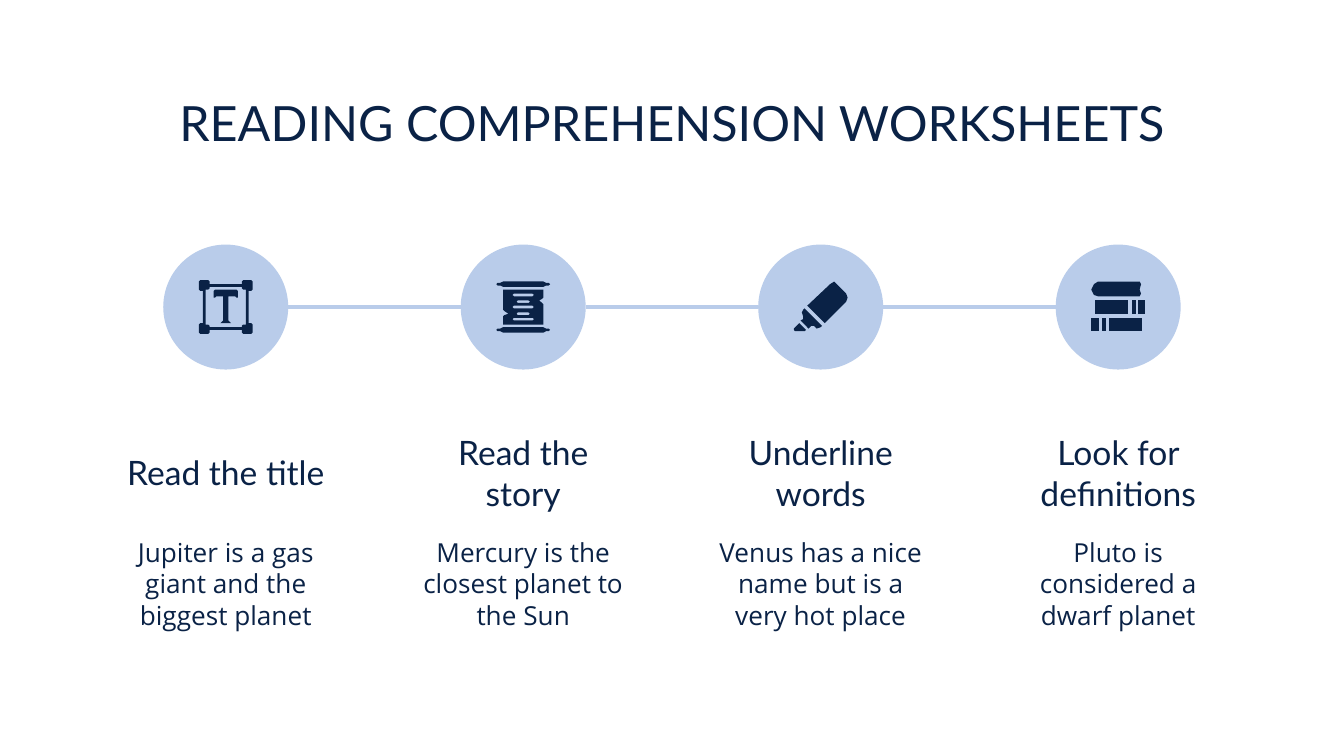
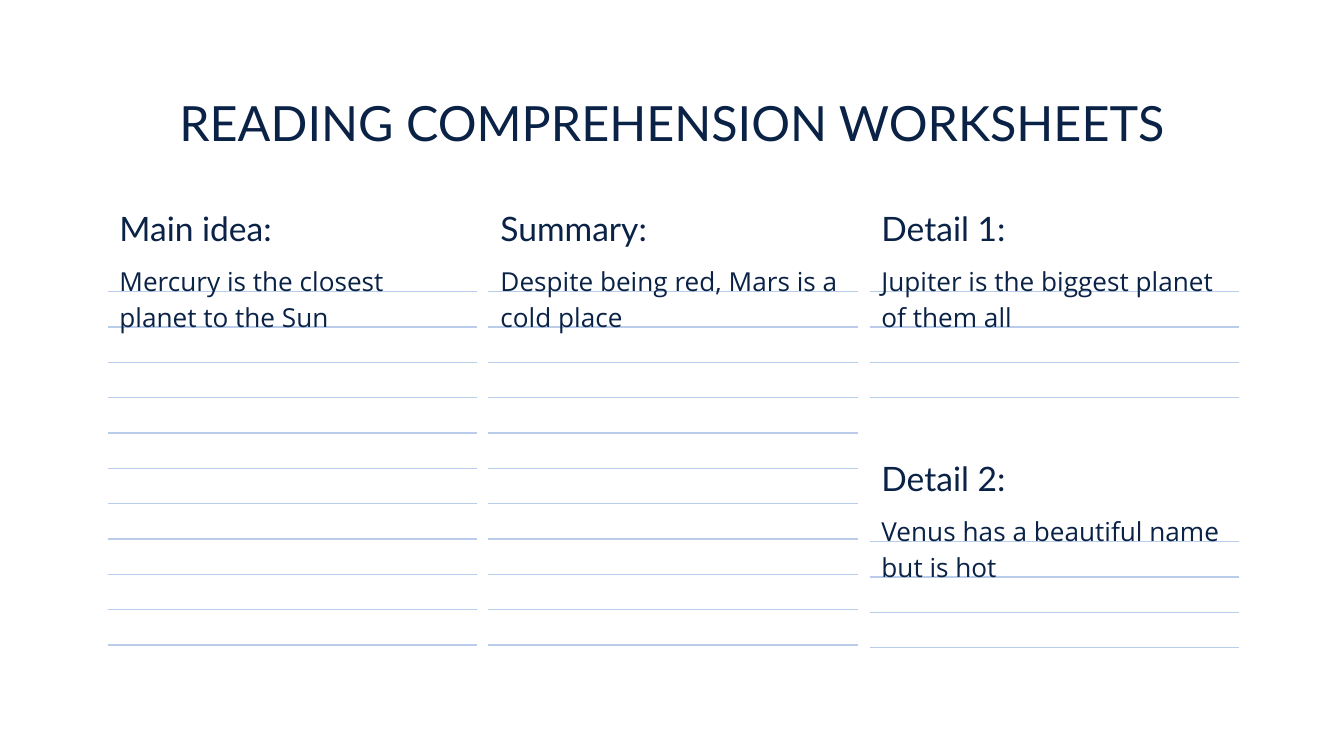
from pptx import Presentation
from pptx.dml.color import RGBColor
from pptx.enum.shapes import MSO_CONNECTOR as Connector, MSO_SHAPE as Preset
from pptx.enum.text import MSO_ANCHOR as Anchor, MSO_AUTO_SIZE as AutoSize, PP_ALIGN as Align
from pptx.oxml.ns import qn
from pptx.util import Inches, Pt
from lxml import etree

NAVY = RGBColor(0x0A, 0x22, 0x46)
SKY = RGBColor(0xB9, 0xCC, 0xEA)
WHITE = RGBColor(0xFF, 0xFF, 0xFF)
HEADING_FONT, BODY_FONT = "Lato", "Open Sans"
TITLE = "READING COMPREHENSION WORKSHEETS"
TITLE_ONLY = 5

# Grids, in inches
PAGE_WIDTH = 10
PAGE_HEIGHT = PAGE_WIDTH * 9 / 16
MARGIN = 0.79
STEP_PITCH, STEP_WIDTH, CIRCLE = 6.64 / 3, 1.78, 0.93
NOTE_PITCH, NOTE_WIDTH, RULE_PITCH = 5.67 / 2, 2.75, 2.63 / 10
NOTE_TOP, LOWER_NOTE_TOP = 1.51, 3.37


# Outlines for icons, in hundredths of an inch from the circle's centre
def mirrored_x(half):
    return half + [(-x, y) for x, y in reversed(half)]


def mirrored_both(quarter):
    left = quarter + [(x, -y) for x, y in reversed(quarter)]
    return left + [(-x, y) for x, y in reversed(left)]


def shifted(points, down):
    return [(x, y + down) for x, y in points]


def slab(left, top, right, bottom):
    return [(left, top), (right, top), (right, bottom), (left, bottom)]


def text_bar(half, middle):
    return shifted(mirrored_both([(1 - half, -1), (-half, 0)]), middle)


# An icon is a list of parts; a part is an outline followed by its holes
FRAME = mirrored_both([(-12, -17), (-12, -19), (-13, -20), (-19, -20),
                       (-20, -19), (-20, -13), (-19, -12), (-17, -12)])
FRAME_HOLE = mirrored_both([(-12, -15), (-12, -14), (-13, -13), (-15, -13)])
LETTER = mirrored_x([(-8, -13), (-9, -12), (-9, -7), (-8, -7), (-7, -8),
                     (-2, -8), (-2, 10), (-4, 12)])
TITLE_ICON = [[FRAME, FRAME_HOLE], [LETTER]]

ROLL = mirrored_both([(-15, -2), (-17, -1), (-19, -1), (-20, 0)])
PAPER = [(-15, -13), (-15, 2), (-14, 3), (-11, 5), (-14, 6), (-15, 7), (-15, 13),
         (15, 13), (15, -2), (14, -3), (12, -5), (14, -6), (15, -7), (15, -13)]
WRITING = [text_bar(half, middle)
           for half, middle in ((8, -9), (5, -4), (8, 0), (5, 5), (8, 9))]
SCROLL_ICON = [[shifted(ROLL, 17)], [shifted(ROLL, -17)], [PAPER] + WRITING]

MARKER_ICON = [
    [[(10, -19), (7, -17), (-10, -1), (3, 12), (19, -4), (20, -7), (19, -10), (12, -17)]],
    [[(-12, 1), (-13, 2), (-14, 4), (-13, 7), (-13, 9), (-15, 10), (-9, 16),
      (-7, 14), (-5, 14), (-3, 16), (0, 15), (1, 14)]],
    [[(-16, 12), (-20, 16), (-20, 17), (-19, 18), (-12, 18), (-11, 17)]],
]

TOP_BOOK = [(-15, -19), (-18, -17), (-20, -13), (-18, -9), (-15, -8),
            (16, -8), (17, -10), (16, -13), (17, -17), (16, -19)]
BOOKS_ICON = [[TOP_BOOK]] + [
    [slab(left, top, right, top + 10)]
    for left, right, top in ((-17, 7, -5), (10, 13, -5), (15, 20, -5),
                             (-20, -14, 8), (-12, -9, 8), (-7, 18, 8))]

STEPS = [
    ("Read the title", "Jupiter is a gas giant and the biggest planet", TITLE_ICON),
    ("Read the story", "Mercury is the closest planet to the Sun", SCROLL_ICON),
    ("Underline words", "Venus has a nice name but is a very hot place", MARKER_ICON),
    ("Look for definitions", "Pluto is considered a dwarf planet", BOOKS_ICON),
]

# Column, top, number of ruled lines, heading, text
NOTES = [
    (0, NOTE_TOP, 11, "Main idea:", "Mercury is the closest planet to the Sun"),
    (1, NOTE_TOP, 11, "Summary:", "Despite being red, Mars is a cold place"),
    (2, NOTE_TOP, 4, "Detail 1:", "Jupiter is the biggest planet of them all"),
    (2, LOWER_NOTE_TOP, 4, "Detail 2:", "Venus has a beautiful name but is hot"),
]


def write(box, text, size, font, align, anchor=Anchor.TOP, spacing=1.0):
    frame = box.text_frame
    frame.word_wrap = True
    frame.auto_size = AutoSize.NONE
    frame.vertical_anchor = anchor
    frame.margin_left = frame.margin_right = Inches(0.1)
    frame.margin_top = frame.margin_bottom = Inches(0.1)
    para = frame.paragraphs[0]
    para.alignment = align
    para.line_spacing = spacing
    para.space_before = Pt(0)
    span = para.add_run()
    span.text = text
    span.font.size = Pt(size)
    span.font.name = font
    span.font.color.rgb = NAVY


def add_text(page, left, top, width, height, *style, **options):
    box = page.shapes.add_textbox(*map(Inches, (left, top, width, height)))
    write(box, *style, **options)


def paint(shape, colour):
    shape.shadow.inherit = False
    shape.fill.solid()
    shape.fill.fore_color.rgb = colour
    shape.line.fill.background()


def add_rule(page, left, right, y, weight):
    rule = page.shapes.add_connector(
        Connector.STRAIGHT, *map(Inches, (left, y, right, y)))
    rule.line.color.rgb = SKY
    rule.line.width = Pt(weight)
    etree.SubElement(rule._element.spPr, qn("a:effectLst"))


def add_titled_page(deck):
    page = deck.slides.add_slide(deck.slide_layouts[TITLE_ONLY])
    page.background.fill.solid()
    page.background.fill.fore_color.rgb = WHITE
    title = page.shapes.title
    title.left, title.top, title.width, title.height = map(
        Inches, (0.78, 0.59, 8.45, 0.63))
    write(title, TITLE, 26, HEADING_FONT, Align.CENTER)
    return page


def add_icon(page, icon, centre_x, centre_y):
    for outline, *holes in icon:
        builder = page.shapes.build_freeform(*outline[0], scale=Inches(0.01))
        builder.add_line_segments(outline[1:])
        for hole in holes:
            builder.move_to(*hole[0])
            builder.add_line_segments(hole[1:])
        paint(builder.convert_to_shape(Inches(centre_x), Inches(centre_y)), NAVY)


def add_step(page, left, top, heading, text, icon):
    # Circle with its icon
    circle_left = left + (STEP_WIDTH - CIRCLE) / 2
    circle = page.shapes.add_shape(
        Preset.OVAL, *map(Inches, (circle_left, top, CIRCLE, CIRCLE)))
    paint(circle, SKY)
    add_icon(page, icon, left + STEP_WIDTH / 2, top + CIRCLE / 2)
    # Heading and description
    add_text(page, left, top + 1.32, STEP_WIDTH, 0.75,
             heading, 18, HEADING_FONT, Align.CENTER, anchor=Anchor.MIDDLE)
    add_text(page, left, top + 2.07, STEP_WIDTH, 0.8,
             text, 14, BODY_FONT, Align.CENTER)


def add_note(page, left, top, lines, heading, text):
    # Ruled paper
    for line in range(lines):
        add_rule(page, left + 0.01, left + 0.01 + NOTE_WIDTH,
                 top + 0.66 + line * RULE_PITCH, 0.75)
    # Heading and answer
    add_text(page, left, top, NOTE_WIDTH, 0.37,
             heading, 18, HEADING_FONT, Align.LEFT, anchor=Anchor.MIDDLE)
    add_text(page, left, top + 0.33, NOTE_WIDTH, lines * RULE_PITCH + 0.2,
             text, 14, BODY_FONT, Align.LEFT, spacing=1.15)


def build_steps_page(deck):
    page = add_titled_page(deck)
    top = 1.82
    for column, step in enumerate(STEPS):
        left = MARGIN + column * STEP_PITCH
        add_step(page, left, top, *step)
        # Link back to the previous circle
        if column:
            right = left + (STEP_WIDTH - CIRCLE) / 2
            add_rule(page, right - STEP_PITCH + CIRCLE, right, top + CIRCLE / 2, 2.25)


def build_notes_page(deck):
    page = add_titled_page(deck)
    for column, top, *note in NOTES:
        add_note(page, MARGIN + column * NOTE_PITCH, top, *note)


def main():
    deck = Presentation()
    deck.slide_width, deck.slide_height = Inches(PAGE_WIDTH), Inches(PAGE_HEIGHT)
    build_steps_page(deck)
    build_notes_page(deck)
    deck.save("out.pptx")


if __name__ == "__main__":
    main()
